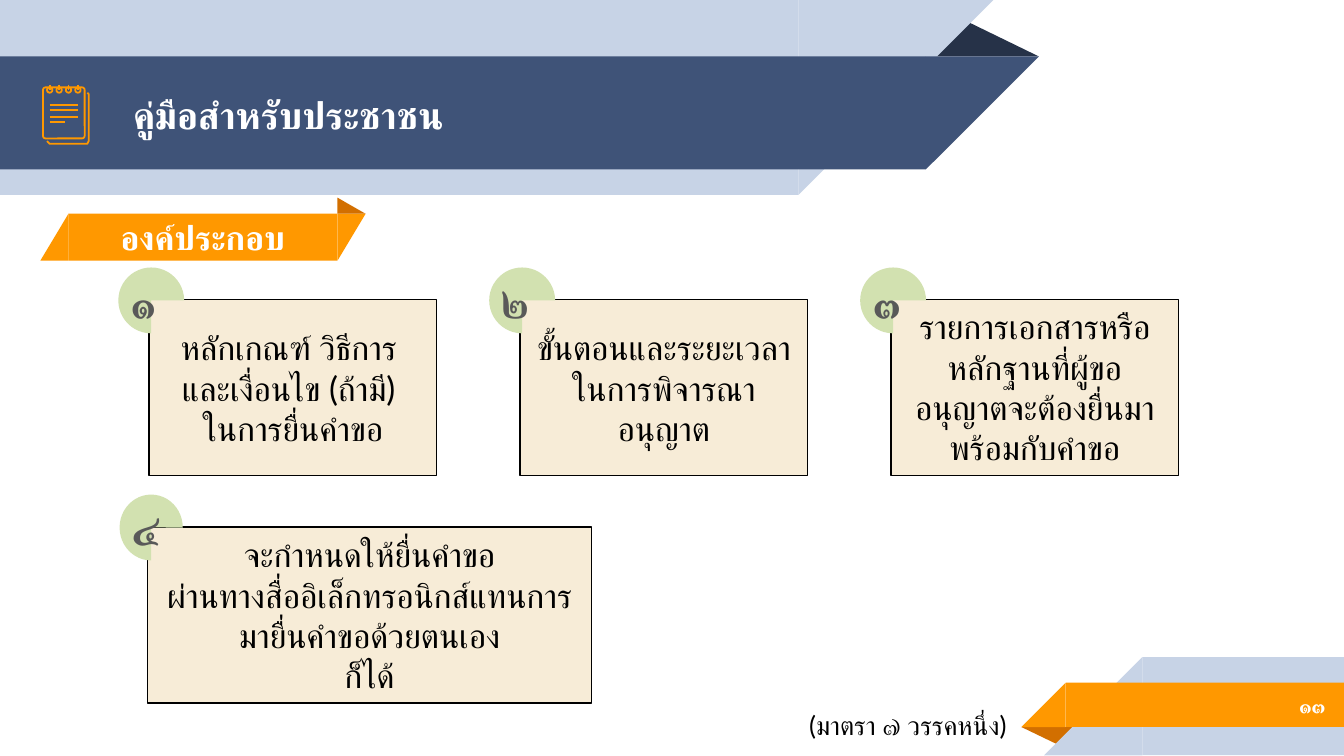
from lxml import etree
from pptx import Presentation
from pptx.dml.color import RGBColor
from pptx.enum.shapes import MSO_CONNECTOR, MSO_SHAPE
from pptx.enum.text import MSO_ANCHOR, MSO_AUTO_SIZE, PP_ALIGN
from pptx.oxml.ns import qn
from pptx.util import Inches, Pt

RECT, PAGE = MSO_SHAPE.RECTANGLE, MSO_SHAPE.ROUNDED_RECTANGLE
RIGHT, PEAK = MSO_SHAPE.RIGHT_TRIANGLE, MSO_SHAPE.ISOSCELES_TRIANGLE
PIE, OVAL = MSO_SHAPE.PIE, MSO_SHAPE.OVAL
LINE = MSO_CONNECTOR.STRAIGHT
MID, TOP = MSO_ANCHOR.MIDDLE, MSO_ANCHOR.TOP
LEFT, CENTER, END = PP_ALIGN.LEFT, PP_ALIGN.CENTER, PP_ALIGN.RIGHT
FIXED = MSO_AUTO_SIZE.NONE

NAVY, INK = RGBColor(0x3F, 0x53, 0x78), RGBColor(0x26, 0x32, 0x48)
PALE, CREAM = RGBColor(0xC7, 0xD3, 0xE6), RGBColor(0xF7, 0xEC, 0xD7)
AMBER, RUST = RGBColor(0xFF, 0x98, 0x00), RGBColor(0xD2, 0x6F, 0x00)
GREEN, GRAY = RGBColor(0xD2, 0xE1, 0xB0), RGBColor(0x59, 0x59, 0x59)
WHITE, BLACK = RGBColor(0xFF, 0xFF, 0xFF), RGBColor(0, 0, 0)
FONT = "Lato"

TITLE = "คู่มือสำหรับประชาชน"
PART = "องค์ประกอบ"
NUMBER = "๑๓"
NOTE = "(มาตรา ๗ วรรคหนึ่ง)"
CARDS = [
    ("๑", ["หลักเกณฑ์ วิธีการ ", "และเงื่อนไข (ถ้ามี) ", "ในการยื่นคำขอ"], MID),
    ("๒", ["ขั้นตอนและระยะเวลาในการพิจารณาอนุญาต"], MID),
    ("๓", ["รายการเอกสารหรือหลักฐานที่ผู้ขออนุญาตจะต้องยื่นมาพร้อมกับคำขอ"], TOP),
]
LAST = ("๔", ["จะกำหนดให้ยื่นคำขอ",
              "ผ่านทางสื่ออิเล็กทรอนิกส์แทนการมายื่นคำขอด้วยตนเอง",
              "ก็ได้"], MID)

BANNER = [
    (PEAK, (6.88, 0.14, 0.85, 0.28), INK, 0, False),
    (RECT, (0, 0, 5.94, 1.45), PALE, 0, False),
    (RIGHT, (5.94, 0, 1.45, 1.45), PALE, 180, True),
    (RECT, (0, 0.42, 6.89, 0.84), NAVY, 0, False),
    (RIGHT, (6.89, 0.42, 0.84, 0.84), NAVY, 180, True),
]
CORNER = [
    (PEAK, (7.6, 5.41, 0.43, 0.14), RUST, 180, False),
    (RECT, (8.5, 4.89, 1.5, 0.73), PALE, 0, False),
    (RIGHT, (7.77, 4.89, 0.73, 0.73), PALE, 0, True),
    (RECT, (7.93, 5.08, 2.08, 0.33), AMBER, 0, False),
    (RIGHT, (7.6, 5.08, 0.33, 0.33), AMBER, 0, True),
]
RULES = [(0.78, 0.58), (0.82, 0.58), (0.87, 0.58), (0.91, 0.48)]
EDGE = [(0.37, 1.07), (0.65, 1.07), (0.66, 1.05), (0.66, 0.7), (0.65, 0.69)]


def place(box):
    return [Inches(n) for n in box]


def draw(home, kind, box, fill=None, turn=0, flip=False, line=None, width=0.75):
    shape = home.shapes.add_shape(kind, *place(box))
    shape.shadow.inherit = False
    shape.rotation = turn
    if flip:
        shape._element.spPr.find(qn("a:xfrm")).set("flipH", "1")
    if fill is None:
        shape.fill.background()
    else:
        shape.fill.solid()
        shape.fill.fore_color.rgb = fill
    if line is None:
        shape.line.fill.background()
    else:
        shape.line.color.rgb = line
        shape.line.width = Pt(width)
    return shape


def write(shape, lines, size, color, bold=False, align=CENTER, anchor=MID,
          pad=0.05, wrap=True):
    frame = shape.text_frame
    frame.auto_size = FIXED
    frame.word_wrap = wrap
    frame.vertical_anchor = anchor
    frame.margin_left = frame.margin_right = Inches(0.1)
    frame.margin_top = frame.margin_bottom = Inches(pad)
    for i, text in enumerate(lines):
        para = frame.add_paragraph() if i else frame.paragraphs[0]
        para.alignment = align
        run = para.add_run()
        run.text = text
        font = run.font
        font.size, font.bold, font.name = Pt(size), bold, FONT
        font.color.rgb = color
        etree.SubElement(run._r.rPr, qn("a:cs")).set("typeface", FONT)


def stroke(home, x1, y1, x2, y2):
    line = home.shapes.add_connector(LINE, *place((x1, y1, x2, y2)))
    line.line.color.rgb = AMBER
    line.line.width = Pt(0.96)
    etree.SubElement(line._element.spPr, qn("a:effectLst"))


def band(slide, parts):
    group = slide.shapes.add_group_shape()
    for part in parts:
        shape = draw(group, *part)
        if part[0] == PEAK:
            shape.adjustments[0] = 0.324


def icon(slide):
    group = slide.shapes.add_group_shape()
    pen = group.shapes.build_freeform(Inches(0.35), Inches(1.05), 1.0)
    pen.add_line_segments([place(p) for p in EDGE], close=False)
    back = pen.convert_to_shape()
    back.shadow.inherit = False
    back.fill.background()
    back.line.color.rgb = AMBER
    back.line.width = Pt(0.96)
    front = draw(group, PAGE, (0.32, 0.65, 0.31, 0.38), line=AMBER, width=0.96)
    front.adjustments[0] = 0.06
    for y, end in RULES:
        stroke(group, 0.37, y, end, y)
    for i in range(4):
        x = 0.37 + 0.07 * i
        draw(group, OVAL, (x - 0.02, 0.65, 0.04, 0.04), line=AMBER, width=0.96)
        stroke(group, x, 0.63, x, 0.67)


def card(slide, item, box, badge):
    mark, lines, anchor = item
    write(draw(slide, RECT, box, CREAM, line=BLACK), lines, 18, BLACK,
          anchor=anchor)
    disc = draw(slide, PIE, badge, GREEN, 90)
    write(disc, [mark], 24, GRAY, True, LEFT)
    disc.text_frame._txBody.bodyPr.set("vert", "vert270")


def main():
    deck = Presentation()
    deck.slide_width = Inches(10)
    deck.slide_height = deck.slide_width * 9 // 16
    slide = deck.slides.add_slide(deck.slide_layouts[5])
    band(slide, BANNER)
    band(slide, CORNER)

    title = slide.shapes.title
    title.left, title.top, title.width, title.height = place((0.89, 0.43, 6.11, 0.84))
    write(title, [TITLE], 20, WHITE, True, LEFT, pad=0.1)
    slide.shapes._spTree.append(title._element)
    number = slide.shapes.add_textbox(*place((8.33, 5.07, 1.63, 0.35)))
    write(number, [NUMBER], 12, WHITE, True, END, pad=0.1)
    icon(slide)

    draw(slide, RIGHT, (0.3, 1.59, 0.21, 0.35), AMBER, flip=True)
    tag = draw(slide, RECT, (0.51, 1.59, 2, 0.35), AMBER)
    write(tag, [PART], 18, WHITE, True, pad=0.1)
    draw(slide, RIGHT, (2.51, 1.59, 0.21, 0.35), AMBER, 180, True)
    fold = draw(slide, PEAK, (2.51, 1.47, 0.21, 0.12), RUST)
    fold.adjustments[0] = 0

    for i, item in enumerate(CARDS):
        x = 1.11 + 2.76 * i
        card(slide, item, (x, 2.23, 2.14, 1.31), (x - 0.23, 1.99, 0.49, 0.49))
    card(slide, LAST, (1.1, 3.92, 3.3, 1.31), (0.88, 3.69, 0.49, 0.47))

    note = slide.shapes.add_textbox(*place((5.82, 5.23, 1.87, 0.34)))
    write(note, [NOTE], 14, BLACK, anchor=TOP, wrap=False)
    deck.save("out.pptx")


if __name__ == "__main__":
    main()
